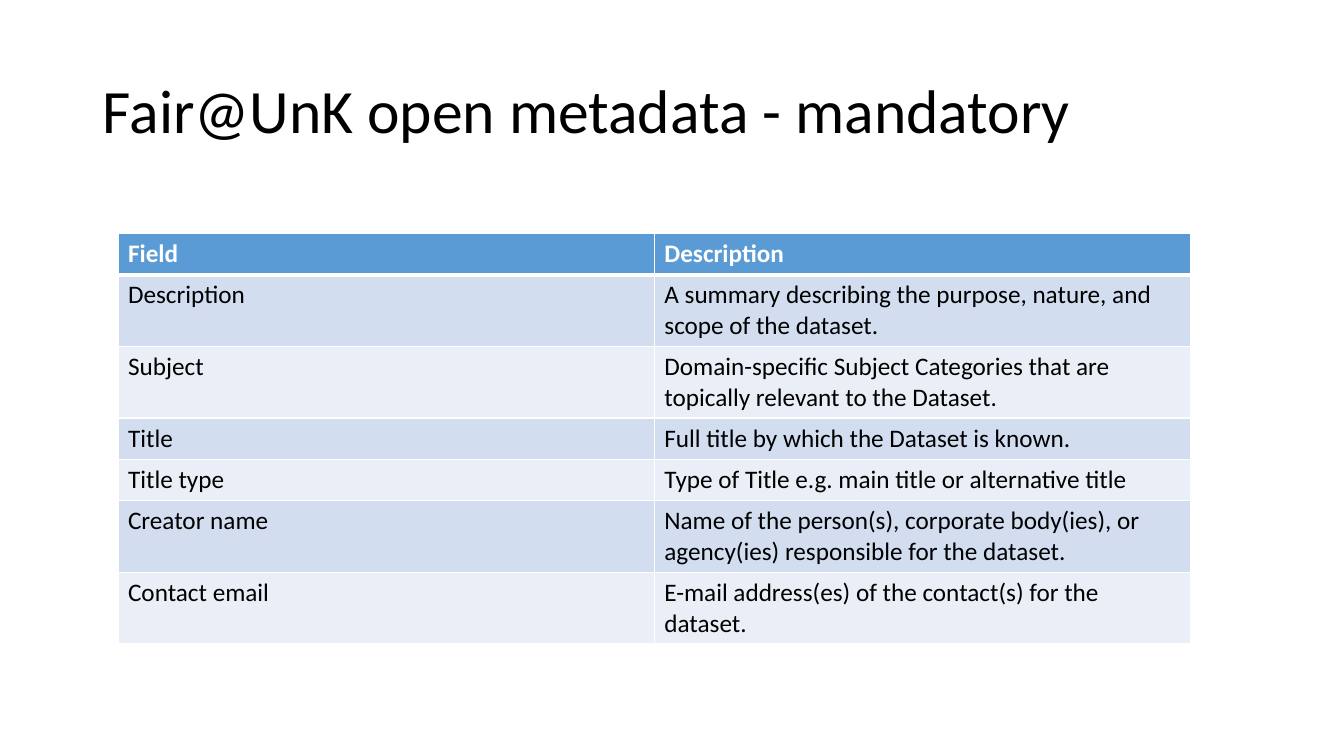
from lxml.etree import SubElement
from pptx import Presentation
from pptx.dml.color import RGBColor
from pptx.enum.text import MSO_ANCHOR, MSO_AUTO_SIZE, PP_ALIGN
from pptx.oxml.ns import qn
from pptx.util import Inches, Pt

COLORS = {
    "header": "5B9BD5",
    "odd": "D2DEEF",
    "even": "EAEFF7",
    "white": "FFFFFF",
    "black": "000000",
}
FIELDS = [
    ("Field", "Description"),
    ("Description", "A summary describing the purpose, nature, and scope of the dataset."),
    ("Subject", "Domain-specific Subject Categories that are topically relevant to the Dataset."),
    ("Title", "Full title by which the Dataset is known."),
    ("Title type", "Type of Title e.g. main title or alternative title"),
    ("Creator name", "Name of the person(s), corporate body(ies), or agency(ies) responsible for the dataset."),
    ("Contact email", "E-mail address(es) of the contact(s) for the dataset."),
]
ROW_HEIGHTS = [0.4, 0.71, 0.71, 0.41, 0.41, 0.71, 0.71]
COLUMN_WIDTH = 5.32


def format_text(paragraph, size, color, bold=False):
    for run in paragraph.runs:
        run.font.name = "Calibri"
        run.font.size = Pt(size)
        run.font.bold = bold
        run.font.color.rgb = RGBColor.from_string(COLORS[color])


def add_borders(cell, widths):
    properties = cell._tc.get_or_add_tcPr()
    for position, (side, width) in enumerate(widths.items()):
        border = SubElement(properties, qn(f"a:{side}"), w=str(Pt(width)))
        fill = SubElement(border, qn("a:solidFill"))
        SubElement(fill, qn("a:srgbClr"), val=COLORS["white"])
        properties.insert(position, border)


presentation = Presentation()
presentation.slide_width = Inches(13.33)
presentation.slide_height = Inches(7.5)
slide = presentation.slides.add_slide(presentation.slide_layouts[5])

heading = slide.shapes.title
heading.left, heading.top = Inches(0.92), Inches(0.4)
heading.width, heading.height = Inches(11.5), Inches(1.45)
heading.text_frame.text = "Fair@UnK\u00a0open metadata - mandatory".replace("\u00a0", " ")
heading.text_frame.auto_size = MSO_AUTO_SIZE.NONE
heading.text_frame.vertical_anchor = MSO_ANCHOR.MIDDLE
heading_line = heading.text_frame.paragraphs[0]
heading_line.alignment = PP_ALIGN.LEFT
heading_line.line_spacing = 0.9
format_text(heading_line, 44, "black")

metadata = slide.shapes.add_table(
    len(FIELDS), 2, Inches(1.17), Inches(2.32),
    Inches(2 * COLUMN_WIDTH), Inches(sum(ROW_HEIGHTS)),
).table
for column in metadata.columns:
    column.width = Inches(COLUMN_WIDTH)

for row_index, (entry, height) in enumerate(zip(FIELDS, ROW_HEIGHTS)):
    metadata.rows[row_index].height = Inches(height)
    is_header = row_index == 0
    shade = "header" if is_header else "odd" if row_index % 2 else "even"
    top = 3 if row_index == 1 else 1
    bottom = 3 if is_header else 1
    for column_index, words in enumerate(entry):
        cell = metadata.cell(row_index, column_index)
        cell.text_frame.text = words
        format_text(cell.text_frame.paragraphs[0], 18, "white" if is_header else "black", is_header)
        cell.fill.solid()
        cell.fill.fore_color.rgb = RGBColor.from_string(COLORS[shade])
        add_borders(cell, {"lnL": 1, "lnR": 1, "lnT": top, "lnB": bottom})

presentation.save("out.pptx")
